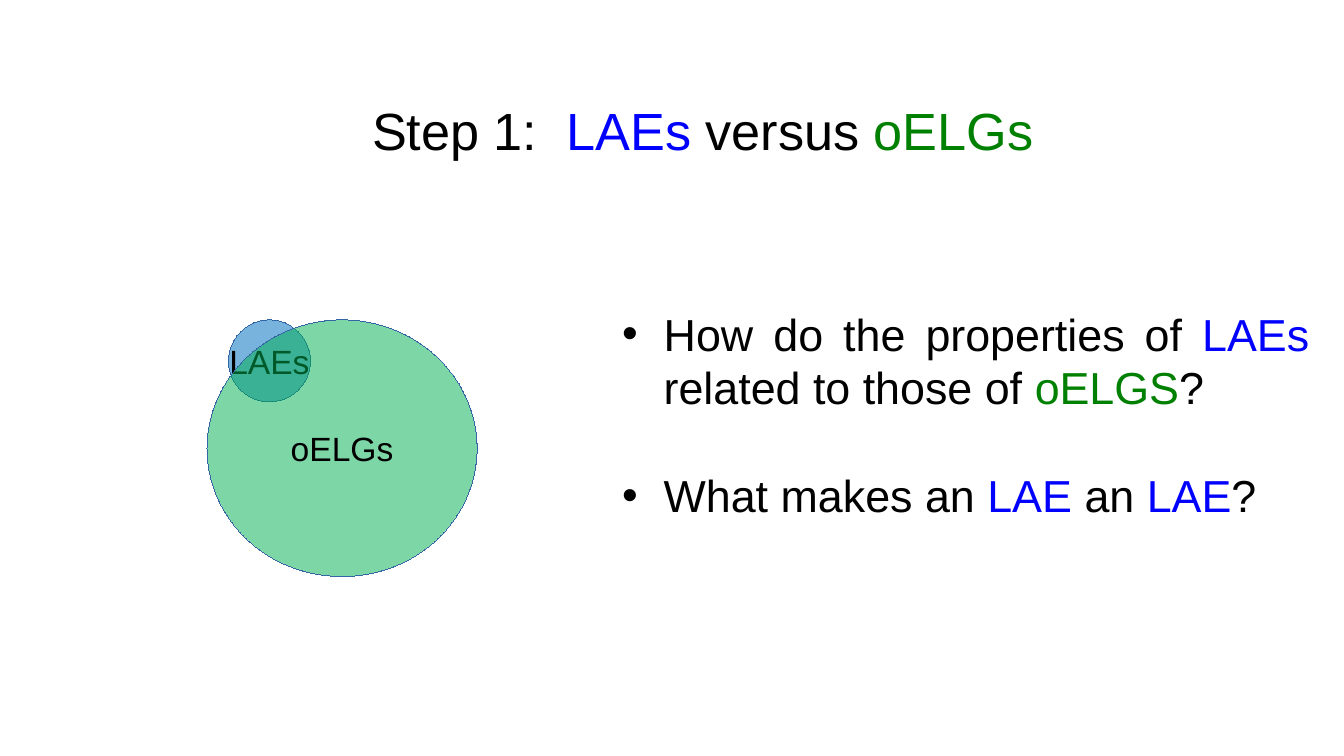
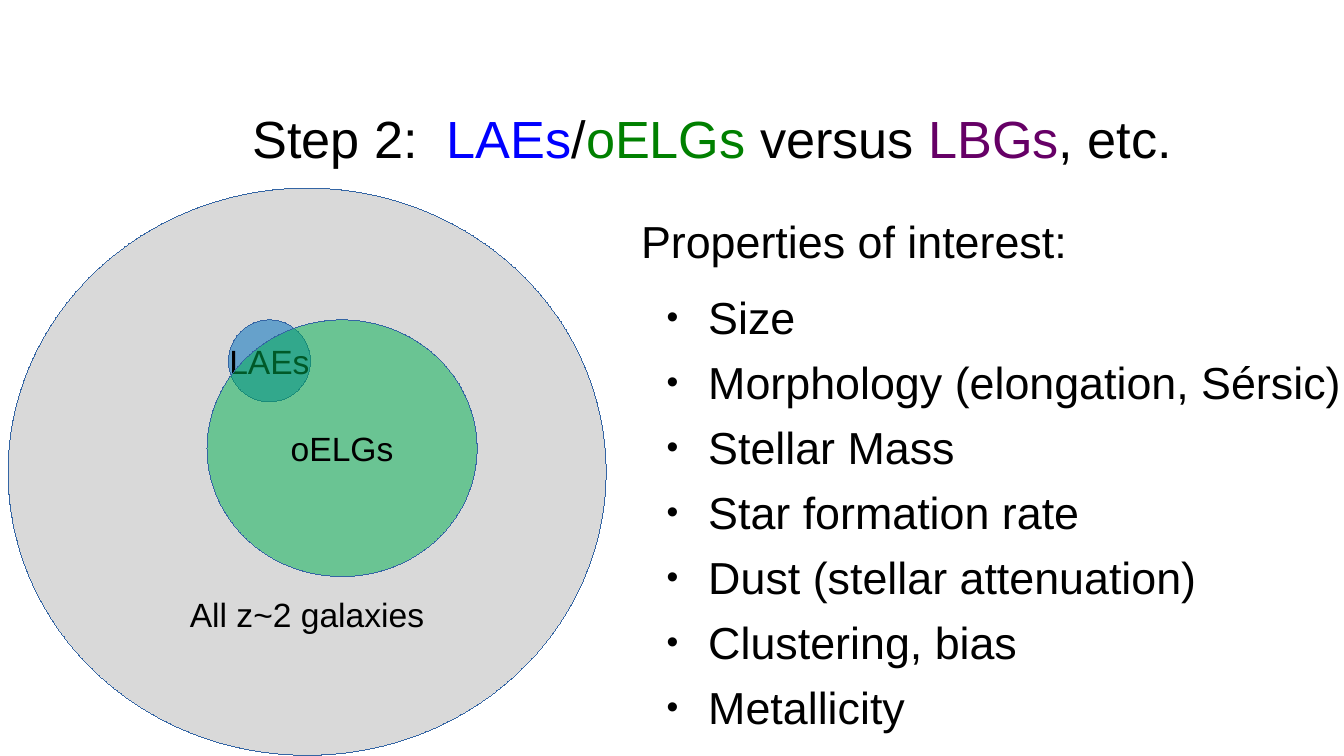
from lxml import etree
from pptx import Presentation
from pptx import util as u
from pptx.dml.color import RGBColor
from pptx.enum import shapes, text
from pptx.oxml.ns import qn

PX = 9144  # 100 px to the inch
SLIDE_WIDTH = 1000
FONT = "Arial"
BLACK = "000000"
LAE_BLUE = "0000FF"
OELG_GREEN = "008000"
LBG_PURPLE = "660066"
OUTLINE = "3465A4"
TITLE_SIZE, BODY_SIZE, LABEL_SIZE = 28, 24, 18
HANGING_INDENT = 31

VENN_BOX = (154, 238, 201, 191)

QUESTIONS = [
    ["How do the properties of ", ("LAEs", LAE_BLUE), " related to those of ",
     ("oELGS", OELG_GREEN), "? "],
    ["What makes an ", ("LAE ", LAE_BLUE), "an ", ("LAE", LAE_BLUE), "?"],
]
PROPERTIES = [
    "Size",
    "Morphology (elongation, Sérsic)",
    "Stellar Mass",
    "Star formation rate",
    "Dust (stellar attenuation)",
    "Clustering, bias",
    "Metallicity",
]


def px(*lengths):
    return [u.Emu(length * PX) for length in lengths]


def rgb(colour):
    return RGBColor.from_string(colour)


def set_margins(frame, left, top, right, bottom):
    (frame.margin_left, frame.margin_top,
     frame.margin_right, frame.margin_bottom) = px(left, top, right, bottom)


def write(paragraph, parts, size):
    """Add runs; a part is plain black text or a (text, colour) pair."""
    for part in parts:
        words, colour = (part, BLACK) if isinstance(part, str) else part
        run = paragraph.add_run()
        run.text = words
        run.font.color.rgb = rgb(colour)
    paragraph.font.name = FONT
    paragraph.font.size = u.Pt(size)


def add_bullet(paragraph, indent, percent=100):
    properties = paragraph._p.get_or_add_pPr()
    properties.set("marL", str(indent * PX))
    properties.set("indent", str(-HANGING_INDENT * PX))
    colour = etree.SubElement(properties, qn("a:buClr"))
    etree.SubElement(colour, qn("a:srgbClr"), val=BLACK)
    etree.SubElement(properties, qn("a:buSzPct"), val=str(percent * 1000))
    etree.SubElement(properties, qn("a:buFont"), typeface=FONT)
    etree.SubElement(properties, qn("a:buChar"), char="•")


def add_text_frame(slide, box, margins):
    frame = slide.shapes.add_textbox(*px(*box)).text_frame
    frame.word_wrap = True
    set_margins(frame, *margins)
    return frame


def add_title(slide, box, parts):
    frame = add_text_frame(slide, box, (10, 10, 10, 10))
    write(frame.paragraphs[0], parts, TITLE_SIZE)


def add_set(slide, box, label, fill, opacity=100, label_drop=0):
    """Add a labelled hairline ellipse; label_drop moves the label below the centre."""
    ellipse = slide.shapes.add_shape(shapes.MSO_SHAPE.OVAL, *px(*box))
    ellipse._element.remove(ellipse._element.find(qn("p:style")))
    ellipse.shadow.inherit = False
    ellipse.fill.solid()
    ellipse.fill.fore_color.rgb = rgb(fill)
    if opacity < 100:
        colour = ellipse._element.spPr.find(qn("a:solidFill"))[0]
        etree.SubElement(colour, qn("a:alpha"), val=str(opacity * 1000))
    ellipse.line.color.rgb = rgb(OUTLINE)

    frame = ellipse.text_frame
    frame.word_wrap = False
    frame.vertical_anchor = text.MSO_ANCHOR.MIDDLE
    set_margins(frame, 10, 5 + 2 * label_drop, 10, 5)
    paragraph = frame.paragraphs[0]
    paragraph.alignment = text.PP_ALIGN.CENTER
    write(paragraph, [label], LABEL_SIZE)


def add_venn(slide, box):
    left, top, width, height = box
    add_set(slide, (left + 16, top, 61, 61), "LAEs", "0070C0", 53)
    add_set(slide, box, "oELGs", "00B050", 51)


def add_questions(slide, box):
    frame = add_text_frame(slide, box, (10, 5, 10, 5))
    frame.auto_size = text.MSO_AUTO_SIZE.SHAPE_TO_FIT_TEXT
    for index, question in enumerate(QUESTIONS):
        paragraph = frame.add_paragraph() if index else frame.paragraphs[0]
        paragraph.alignment = text.PP_ALIGN.JUSTIFY
        add_bullet(paragraph, HANGING_INDENT)
        if index:
            paragraph.space_before = u.Pt(29)
        write(paragraph, question, BODY_SIZE)


def add_properties(slide, box):
    frame = add_text_frame(slide, box, (0, 0, 0, 0))
    heading = frame.paragraphs[0]
    heading._p.get_or_add_pPr().set("marL", str(12 * PX))
    heading.space_after = u.Pt(6)
    write(heading, ["Properties of interest:"], BODY_SIZE)
    for name in PROPERTIES:
        paragraph = frame.add_paragraph()
        paragraph.level = 1
        add_bullet(paragraph, 2 * HANGING_INDENT, 75)
        paragraph.space_before = u.Pt(6)
        write(paragraph, [name], BODY_SIZE)


def build_step_one(slide):
    add_venn(slide, VENN_BOX)
    add_title(slide, (267, 63, 600, 63),
              ["Step 1:  ", ("LAEs", LAE_BLUE), " versus ", ("oELGs", OELG_GREEN)])
    add_questions(slide, (453, 223, 531, 172))


def build_step_two(slide):
    add_set(slide, (6, 140, 445, 422), "All z~2 galaxies", "D9D9D9", label_drop=106)
    add_venn(slide, VENN_BOX)
    add_title(slide, (178, 69, 730, 63),
              ["Step 2:  ", ("LAEs", LAE_BLUE), "/", ("oELGs", OELG_GREEN),
               " versus ", ("LBGs", LBG_PURPLE), ", etc."])
    add_properties(slide, (465, 159, 533, 374))


def main():
    presentation = Presentation()
    presentation.slide_width = u.Emu(SLIDE_WIDTH * PX)
    presentation.slide_height = u.Emu(SLIDE_WIDTH * PX * 9 // 16)
    blank = presentation.slide_layouts[6]
    for build in (build_step_one, build_step_two):
        build(presentation.slides.add_slide(blank))
    presentation.save("out.pptx")


if __name__ == "__main__":
    main()
